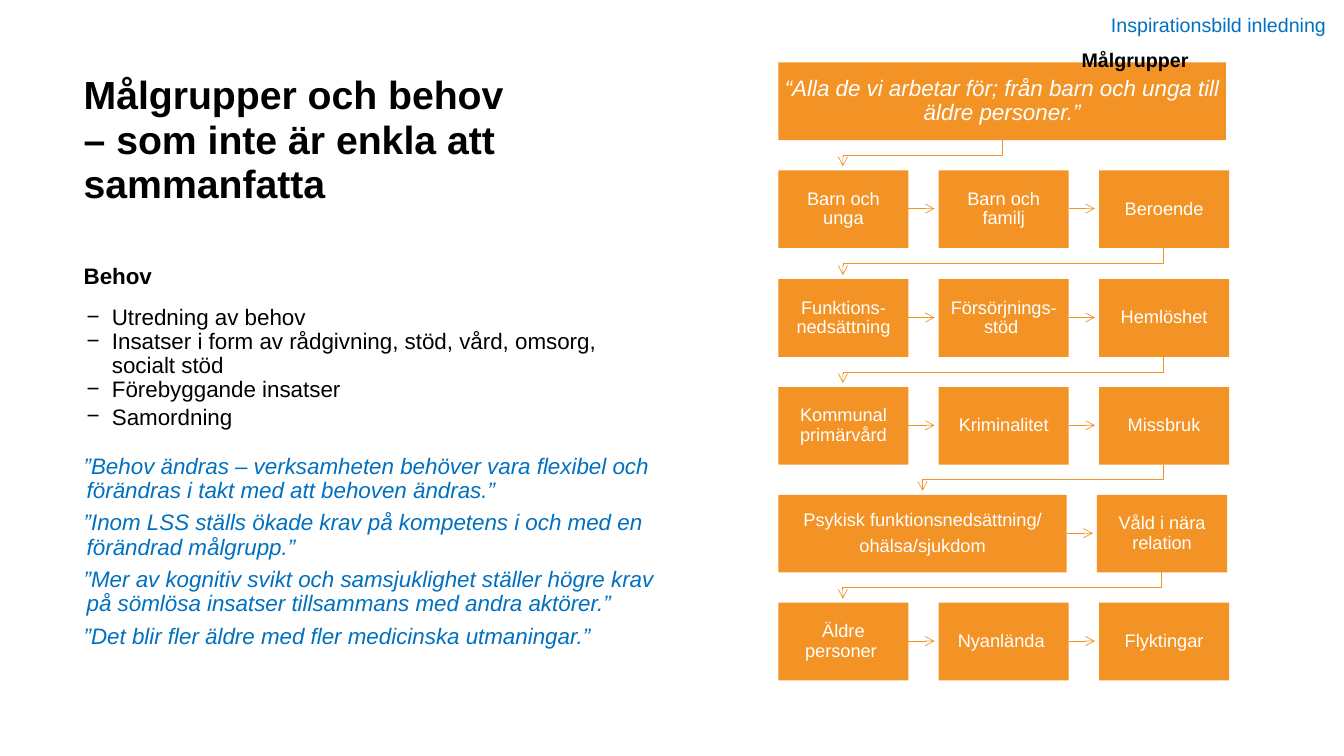
from pptx import Presentation
from pptx import util as u
from pptx.dml import color
from pptx.enum import shapes, text
from pptx.oxml import ns
from lxml import etree

PX = 9144
ORANGE, WHITE, BLACK, BLUE = "F39325", "FFFFFF", "000000", "0070C0"
LEFT, TOP, ROW_PITCH = 772, 62, 107.3
BOX_WIDTH, BOX_HEIGHT, GAP = 129, 77, 30
TIP_GAP = 4

NEEDS = [
    "Utredning av behov",
    "Insatser i form av rådgivning, stöd, vård, omsorg, socialt stöd",
    "Förebyggande insatser",
    "Samordning",
]
QUOTES = [
    "”Behov ändras – verksamheten behöver vara flexibel och förändras i takt med att behoven ändras.”",
    "”Inom LSS ställs ökade krav på kompetens i och med en förändrad målgrupp.”",
    "”Mer av kognitiv svikt och samsjuklighet ställer högre krav på sömlösa insatser tillsammans med andra aktörer.”",
    "”Det blir fler äldre med fler medicinska utmaningar.”",
]
HEADER = "“Alla de vi arbetar för; från barn och unga till äldre personer.”"
GROUP_ROWS = [
    [("Barn och unga", BOX_WIDTH), ("Barn och familj", BOX_WIDTH), ("Beroende", BOX_WIDTH)],
    [("Funktions-nedsättning", BOX_WIDTH), ("Försörjnings-stöd ", BOX_WIDTH), ("Hemlöshet", BOX_WIDTH)],
    [("Kommunal primärvård", BOX_WIDTH), ("Kriminalitet", BOX_WIDTH), ("Missbruk", BOX_WIDTH)],
    [("Psykisk funktionsnedsättning/\nohälsa/sjukdom", 286), ("Våld i nära relation", BOX_WIDTH)],
    [("Äldre personer ", BOX_WIDTH), ("Nyanlända ", BOX_WIDTH), ("Flyktingar", BOX_WIDTH)],
]


def px(value):
    return u.Emu(value * PX)


def rgb(value):
    return color.RGBColor.from_string(value)


def place(box, left, top, width, height):
    box.left, box.top, box.width, box.height = map(px, (left, top, width, height))


def add_span(para, words, size, hue, bold=False, italic=False):
    span = para.add_run()
    span.text = words
    font = span.font
    font.name, font.size, font.bold, font.italic = "Arial", u.Pt(size), bold, italic
    font.color.rgb = rgb(hue)


def space(para, line, after=0):
    para.line_spacing = line
    para.space_before = u.Pt(0)
    para.space_after = u.Pt(after)


def next_para(frame):
    return frame.add_paragraph() if frame.paragraphs[0].runs else frame.paragraphs[0]


def add_title(page):
    box = page.shapes.title
    place(box, 73, 68, 594, 162)
    frame = box.text_frame
    frame.auto_size = text.MSO_AUTO_SIZE.NONE
    frame.vertical_anchor = text.MSO_ANCHOR.TOP
    para = frame.paragraphs[0]
    para.alignment = text.PP_ALIGN.LEFT
    space(para, 0.95)
    add_span(para, "Målgrupper och behov ", 28, BLACK, bold=True)
    para.add_line_break()
    add_span(para, "– som inte är enkla att sammanfatta", 28, BLACK, bold=True)


def add_body_para(frame, words, after, line=0.9, bullet=None, hue=BLACK, bold=False, italic=False):
    para = next_para(frame)
    space(para, line, after)
    props = para._p.get_or_add_pPr()
    props.set("marL", str(px(28 if bullet else 3)))
    props.set("indent", str(px(-25)))
    if bullet:
        etree.SubElement(props, ns.qn("a:buFont"), typeface="Arial")
        etree.SubElement(props, ns.qn("a:buChar"), char=bullet)
    else:
        etree.SubElement(props, ns.qn("a:buNone"))
    add_span(para, words, 16, hue, bold, italic)


def add_body(page):
    box = page.placeholders[1]
    place(box, 73, 258, 594, 424)
    frame = box.text_frame
    frame.auto_size = text.MSO_AUTO_SIZE.NONE
    add_body_para(frame, "Behov", 12, bold=True)
    for need in NEEDS[:-1]:
        add_body_para(frame, need, 0, bullet="−")
    add_body_para(frame, NEEDS[-1], 18, line=1.0, bullet="−")
    for quote in QUOTES:
        add_body_para(frame, quote, 6, hue=BLUE, italic=True)


def add_label(page, words, left, top, width, height, hue, bold=False):
    box = page.shapes.add_textbox(px(left), px(top), px(width), px(height))
    box.text_frame.word_wrap = True
    para = box.text_frame.paragraphs[0]
    space(para, 0.9 if bold else 1.0)
    add_span(para, words, 14, hue, bold)


def add_group_box(page, words, left, top, width, size=13, italic=False):
    box = page.shapes.add_shape(shapes.MSO_SHAPE.RECTANGLE, px(left), px(top), px(width), px(BOX_HEIGHT))
    box.shadow.inherit = False
    box.fill.solid()
    box.fill.fore_color.rgb = rgb(ORANGE)
    box.line.fill.background()
    frame = box.text_frame
    frame.word_wrap = True
    frame.vertical_anchor = text.MSO_ANCHOR.MIDDLE
    frame.margin_left = frame.margin_right = px(6)
    frame.margin_top = frame.margin_bottom = px(7)
    for words_line in words.split("\n"):
        para = next_para(frame)
        para.alignment = text.PP_ALIGN.CENTER
        space(para, 0.9, 5)
        add_span(para, words_line, size, WHITE, italic=italic)


def style_arrow(arrow):
    arrow.line.color.rgb = rgb(ORANGE)
    arrow.line.width = u.Pt(0.5)
    etree.SubElement(arrow.line._get_or_add_ln(), ns.qn("a:tailEnd"), type="arrow")


def add_straight_arrow(page, left, right, y):
    arrow = page.shapes.add_connector(shapes.MSO_CONNECTOR.STRAIGHT, px(left), px(y), px(right), px(y))
    style_arrow(arrow)
    etree.SubElement(arrow._element.spPr, ns.qn("a:effectLst"))


def add_bent_arrow(page, start_x, start_y, end_x, end_y):
    bend_y = start_y + GAP // 2
    builder = page.shapes.build_freeform(start_x, start_y, scale=PX)
    builder.add_line_segments([(start_x, bend_y), (end_x, bend_y), (end_x, end_y)], close=False)
    arrow = builder.convert_to_shape()
    arrow.shadow.inherit = False
    arrow.fill.background()
    style_arrow(arrow)


def add_group_flow(page):
    rows = [[(HEADER, 444)]] + GROUP_ROWS
    last_center = last_bottom = None
    for index, row in enumerate(rows):
        top = TOP + round(index * ROW_PITCH)
        left = LEFT
        if index:
            add_bent_arrow(page, last_center, last_bottom, LEFT + row[0][1] // 2, top - TIP_GAP)
        for column, (words, width) in enumerate(row):
            if column:
                add_straight_arrow(page, left - GAP, left - TIP_GAP, top + BOX_HEIGHT // 2)
            add_group_box(page, words, left, top, width, 13 if index else 16, italic=not index)
            last_center = left + width // 2
            left += width + GAP
        last_bottom = top + BOX_HEIGHT


def main():
    deck = Presentation()
    deck.slide_width, deck.slide_height = px(1333), px(750)
    page = deck.slides.add_slide(deck.slide_layouts[1])
    add_body(page)
    add_title(page)
    add_group_flow(page)
    add_label(page, "Målgrupper", 1063, 45, 186, 31, BLACK, bold=True)
    add_label(page, "Inspirationsbild inledning", 1092, 8, 238, 34, BLUE)
    deck.save("out.pptx")


if __name__ == "__main__":
    main()
